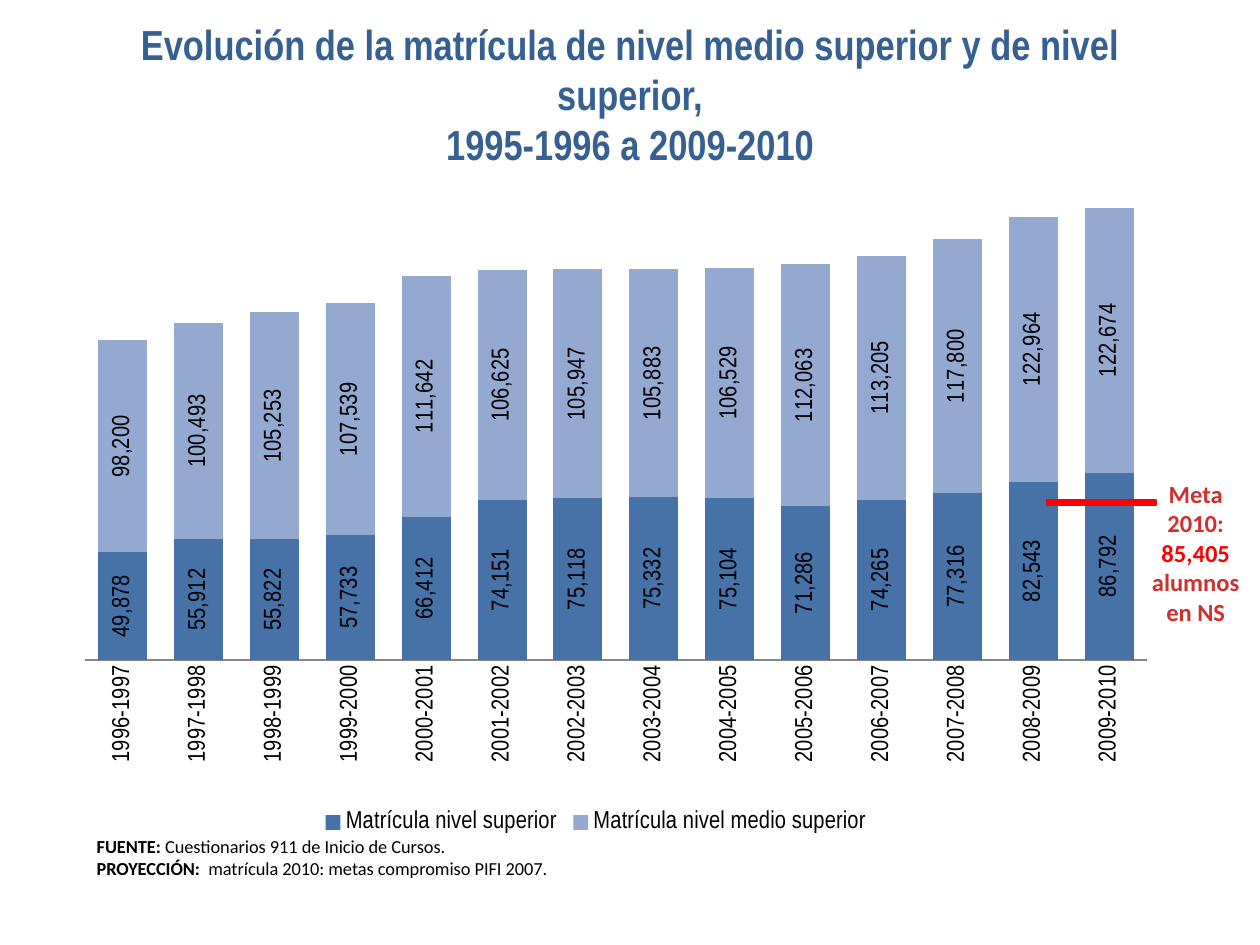
from lxml import etree
from pptx import Presentation
from pptx.chart.data import CategoryChartData
from pptx.dml.color import RGBColor
from pptx.enum.chart import XL_CHART_TYPE, XL_LABEL_POSITION, XL_LEGEND_POSITION, XL_TICK_MARK
from pptx.enum.shapes import MSO_SHAPE
from pptx.enum.text import MSO_ANCHOR, PP_ALIGN
from pptx.oxml.ns import qn
from pptx.util import Cm, Pt

STACKED = XL_CHART_TYPE.COLUMN_STACKED
CENTER_LABEL = XL_LABEL_POSITION.CENTER
LEGEND_BOTTOM = XL_LEGEND_POSITION.BOTTOM
NO_TICK = XL_TICK_MARK.NONE
MINUS = MSO_SHAPE.MATH_MINUS
TOP, MIDDLE = MSO_ANCHOR.TOP, MSO_ANCHOR.MIDDLE
LEFT, CENTER = PP_ALIGN.LEFT, PP_ALIGN.CENTER

COLORS = {
    "title": "376092",
    "text": "000000",
    "higher": "4672A8",
    "upper_secondary": "93A9CF",
    "axis": "878787",
    "target": "FF0000",
    "target_text": "D02F2C",
}
NARROW, BODY = "Arial Narrow", "Calibri"
UPWARD = "-5400000"


def color(name):
    return RGBColor.from_string(COLORS[name])


def add_text(slide, box, paragraphs, font_name, size, alignment, anchor=TOP):
    text_frame = slide.shapes.add_textbox(*[Cm(value) for value in box]).text_frame
    text_frame.word_wrap = True
    text_frame.vertical_anchor = anchor
    for index, runs in enumerate(paragraphs):
        paragraph = text_frame.paragraphs[0] if index == 0 else text_frame.add_paragraph()
        paragraph.alignment = alignment
        for text, color_name, bold in runs:
            run = paragraph.add_run()
            run.text = text
            run.font.name = font_name
            run.font.size = Pt(size)
            run.font.bold = bold
            run.font.color.rgb = color(color_name)


presentation = Presentation()
presentation.slide_width = Cm(25.4)
presentation.slide_height = Cm(19.05)
slide = presentation.slides.add_slide(presentation.slide_layouts[6])

series_values = {
    "Matrícula nivel superior": [
        49878, 55912, 55822, 57733, 66412, 74151, 75118,
        75332, 75104, 71286, 74265, 77316, 82543, 86792,
    ],
    "Matrícula nivel medio superior": [
        98200, 100493, 105253, 107539, 111642, 106625, 105947,
        105883, 106529, 112063, 113205, 117800, 122964, 122674,
    ],
}
chart_data = CategoryChartData(number_format="#,##0")
chart_data.categories = [f"{year}-{year + 1}" for year in range(1996, 2010)]
for name, values in series_values.items():
    chart_data.add_series(name, values)

chart = slide.shapes.add_chart(
    STACKED, Cm(0.51), Cm(3.33), Cm(23.01), Cm(13.59), chart_data
).chart
chart.has_title = False
chart.font.name = NARROW
chart.font.size = Pt(14)
chart.font.color.rgb = color("text")
chart.has_legend = True
chart.legend.position = LEGEND_BOTTOM
chart.legend.include_in_layout = False

value_axis = chart.value_axis
value_axis.visible = False
value_axis.has_major_gridlines = False
value_axis.minimum_scale = 0
value_axis.maximum_scale = 220000
value_axis.major_unit = 40000

category_axis = chart.category_axis
category_axis.major_tick_mark = NO_TICK
category_axis.format.line.color.rgb = color("axis")
category_axis.tick_labels.font.size = Pt(14)
category_axis._element.txPr.find(qn("a:bodyPr")).set("rot", UPWARD)

plot = chart.plots[0]
plot.gap_width = 55
plot.overlap = 100
plot.vary_by_categories = False
for series, color_name in zip(plot.series, ("higher", "upper_secondary")):
    series.format.fill.solid()
    series.format.fill.fore_color.rgb = color(color_name)
    labels = series.data_labels
    labels.show_value = True
    labels.position = CENTER_LABEL
    labels.number_format = "#,##0"
    labels.number_format_is_linked = False
    labels.font.size = Pt(14)
    labels._element.txPr.find(qn("a:bodyPr")).set("rot", UPWARD)

plot_area = chart._chartSpace.chart.plotArea
for old_layout in plot_area.findall(qn("c:layout")):
    plot_area.remove(old_layout)
layout = etree.Element(qn("c:layout"))
manual_layout = etree.SubElement(layout, qn("c:manualLayout"))
layout_values = {
    "layoutTarget": "inner", "xMode": "edge", "yMode": "edge",
    "x": "0.052", "y": "0.03", "w": "0.931", "h": "0.704",
}
for tag, value in layout_values.items():
    etree.SubElement(manual_layout, qn(f"c:{tag}")).set("val", value)
plot_area.insert(0, layout)

add_text(
    slide, (1.7, 16.71, 16.61, 0.99),
    [
        [("FUENTE: ", "text", True), ("Cuestionarios 911 de Inicio de Cursos.", "text", False)],
        [("PROYECCIÓN: ", "text", True),
         (" matrícula 2010: metas compromiso PIFI 2007.", "text", False)],
    ],
    BODY, 10.5, LEFT,
)
add_text(
    slide, (1.27, 0.3, 22.86, 3.18),
    [
        [("Evolución de la matrícula de nivel medio superior y de nivel superior,", "title", True)],
        [("1995-1996 a 2009-2010", "title", True)],
    ],
    NARROW, 24, CENTER, MIDDLE,
)

target_line = slide.shapes.add_shape(MINUS, Cm(20.7), Cm(9.93), Cm(3), Cm(0.41))
target_line.shadow.inherit = False
target_line.fill.solid()
target_line.fill.fore_color.rgb = color("target")
target_line.line.color.rgb = color("target")
target_line.line.width = Pt(1)

add_text(
    slide, (22.81, 9.53, 2.59, 3.84),
    [
        [("Meta 2010:", "target_text", True)],
        [("85,405 ", "target", True), ("alumnos en NS", "target_text", True)],
    ],
    BODY, 14, CENTER,
)

presentation.save("out.pptx")
